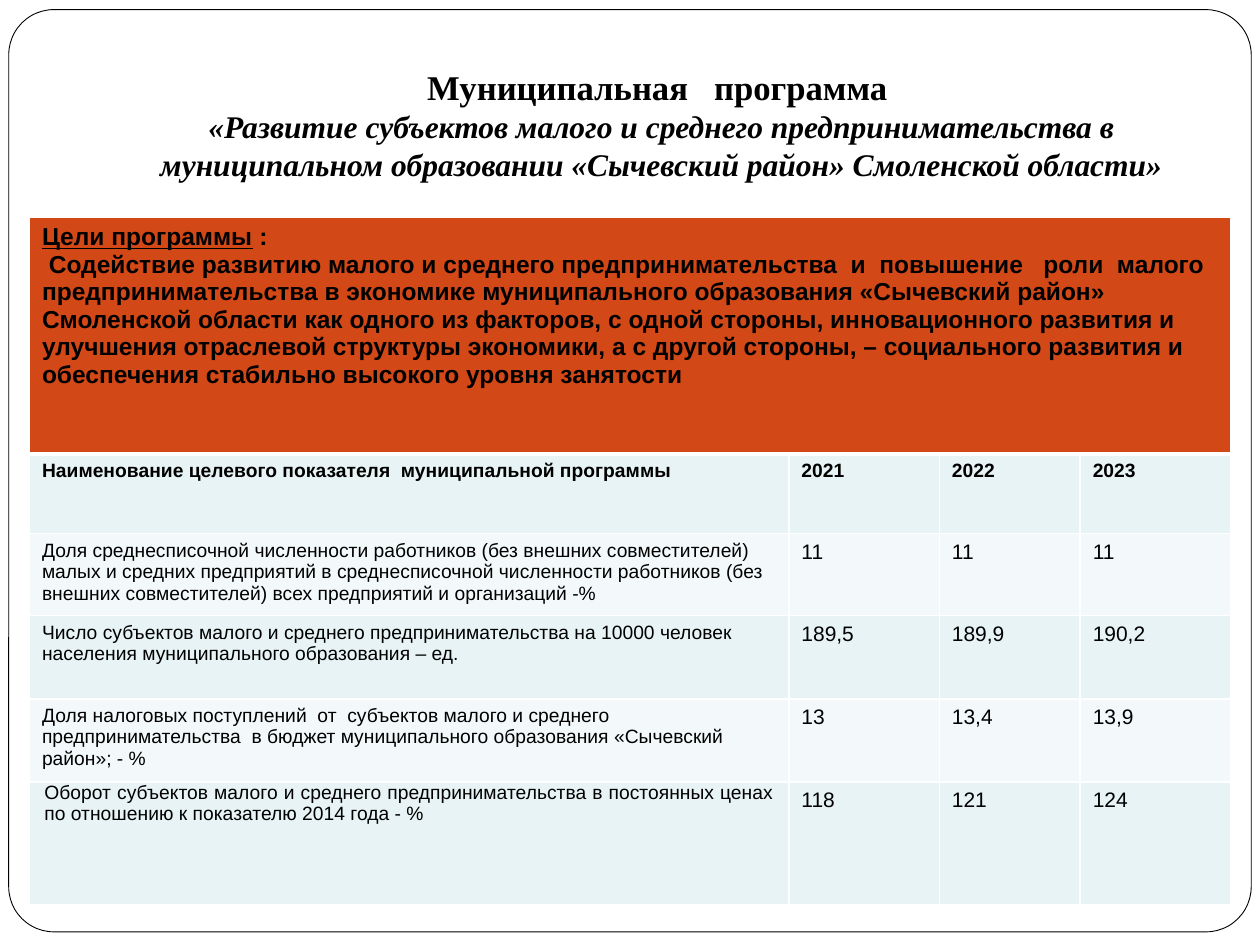
from lxml.etree import SubElement as Sub
from pptx import Presentation
from pptx.dml.color import RGBColor
from pptx.enum.shapes import MSO_SHAPE as Shape
from pptx.enum.text import MSO_ANCHOR as Anchor, PP_ALIGN as Align
from pptx.oxml.ns import qn
from pptx.util import Pt

BLACK = RGBColor(0, 0, 0)
WHITE = RGBColor(0xFF, 0xFF, 0xFF)
RUST = RGBColor(0xD3, 0x48, 0x17)
TINTS = [RGBColor(0xE7, 0xF3, 0xF4), RGBColor(0xF3, 0xF9, 0xFA)]

COLS = [434, 86, 80.5, 86]
ROWS = [135.5, 45.5, 43.5, 47.5, 47.5, 70]

HEAD = {"name": "Times New Roman", "size": Pt(19.8), "bold": True}
NAME = HEAD | {"size": Pt(18), "italic": True}
GOAL = {"name": "Arial", "size": Pt(14), "bold": True}
LABEL = {"name": "Arial", "size": Pt(11), "bold": False}
VALUE = LABEL | {"size": Pt(12)}
YEAR = LABEL | {"bold": True}

GOALS = (
    " Содействие развитию малого и среднего предпринимательства  и  повышение   "
    "роли  малого предпринимательства в экономике муниципального образования "
    "«Сычевский район» Смоленской области как одного из факторов, с одной стороны, "
    "инновационного развития и улучшения отраслевой структуры экономики, а с другой "
    "стороны, – социального развития и обеспечения стабильно высокого уровня занятости"
)
DATA = [
    ("Наименование целевого показателя  муниципальной программы",
     "2021", "2022", "2023"),
    ("Доля среднесписочной численности работников (без внешних совместителей) "
     "малых и средних предприятий в среднесписочной численности работников "
     "(без внешних совместителей) всех предприятий и организаций -%",
     "11", "11", "11"),
    ("Число субъектов малого и среднего предпринимательства на 10000 человек "
     "населения муниципального образования – ед.",
     "189,5", "189,9", "190,2"),
    ("Доля налоговых поступлений  от  субъектов малого и среднего "
     "предпринимательства  в бюджет муниципального образования "
     "«Сычевский район»; - %",
     "13", "13,4", "13,9"),
    ("Оборот субъектов малого и среднего предпринимательства в постоянных ценах "
     "по отношению к показателю 2014 года - %",
     "118", "121", "124"),
]


def put(obj, form):
    for key, val in form.items():
        setattr(obj, key, val)


def write(para, text, form):
    run = para.add_run()
    run.text = text
    put(run.font, form)
    run.font.color.rgb = BLACK


def edge(cell, sides):
    """Draw white cell borders; sides maps a tag to a width in points."""
    props = cell._tc.get_or_add_tcPr()
    for spot, (tag, width) in enumerate(sides.items()):
        line = Sub(props, qn(f"a:{tag}"), w=str(Pt(width)))
        fill = Sub(line, qn("a:solidFill"))
        Sub(fill, qn("a:srgbClr"), val=str(WHITE))
        props.insert(spot, line)


def paint(cell, color, top=1, base=1):
    cell.fill.solid()
    cell.fill.fore_color.rgb = color
    edge(cell, {"lnL": 1, "lnR": 1, "lnT": top, "lnB": base})


def add_frame(slide):
    frame = slide.shapes.add_shape(
        Shape.ROUNDED_RECTANGLE, Pt(5), Pt(5.5), Pt(710), Pt(527))
    frame.adjustments[0] = 0.049
    frame.shadow.inherit = False
    frame.fill.solid()
    frame.fill.fore_color.rgb = WHITE
    frame.line.color.rgb = BLACK
    frame.line.width = Pt(0.5)


def add_title(slide):
    box = slide.shapes.add_textbox(Pt(72), Pt(21.6), Pt(612), Pt(90))
    text = box.text_frame
    put(text, {"word_wrap": True, "vertical_anchor": Anchor.BOTTOM,
               "margin_bottom": Pt(7.2)})
    para = text.paragraphs[0]
    para.alignment = Align.CENTER
    write(para, "Муниципальная   программа ", HEAD)
    para.add_line_break()
    write(para, "«Развитие субъектов малого и среднего предпринимательства в "
                "муниципальном образовании «Сычевский район» Смоленской области»",
          NAME)


def add_goals(table):
    for cell in table.rows[0].cells:
        paint(cell, RUST, base=3)
    cell = table.cell(0, 0)
    cell.merge(table.cell(0, len(COLS) - 1))
    para = cell.text_frame.paragraphs[0]
    write(para, "Цели программы", GOAL | {"underline": True})
    write(para, " :", GOAL)
    write(cell.text_frame.add_paragraph(), GOALS, GOAL)


def add_table(slide):
    table = slide.shapes.add_table(
        len(ROWS), len(COLS), Pt(16.8), Pt(124),
        Pt(sum(COLS)), Pt(sum(ROWS))).table
    for col, width in zip(table.columns, COLS):
        col.width = Pt(width)
    for row, height in zip(table.rows, ROWS):
        row.height = Pt(height)
    add_goals(table)

    # Indicators by year
    for i, line in enumerate(DATA):
        for j, text in enumerate(line):
            cell = table.cell(i + 1, j)
            paint(cell, TINTS[i % 2], top=1 if i else 3)
            form = YEAR if i == 0 else VALUE if j else LABEL
            write(cell.text_frame.paragraphs[0], text, form)

    # Last label is justified, with its own margins
    last = table.cell(len(DATA), 0)
    put(last, {"margin_left": Pt(8.6), "margin_right": Pt(8.6),
               "margin_top": 0, "margin_bottom": 0})
    last.text_frame.paragraphs[0].alignment = Align.JUSTIFY


def main():
    deck = Presentation()
    put(deck, {"slide_width": Pt(720), "slide_height": Pt(540)})
    slide = deck.slides.add_slide(deck.slide_layouts[6])
    add_frame(slide)
    add_title(slide)
    add_table(slide)
    deck.save("out.pptx")


if __name__ == "__main__":
    main()
